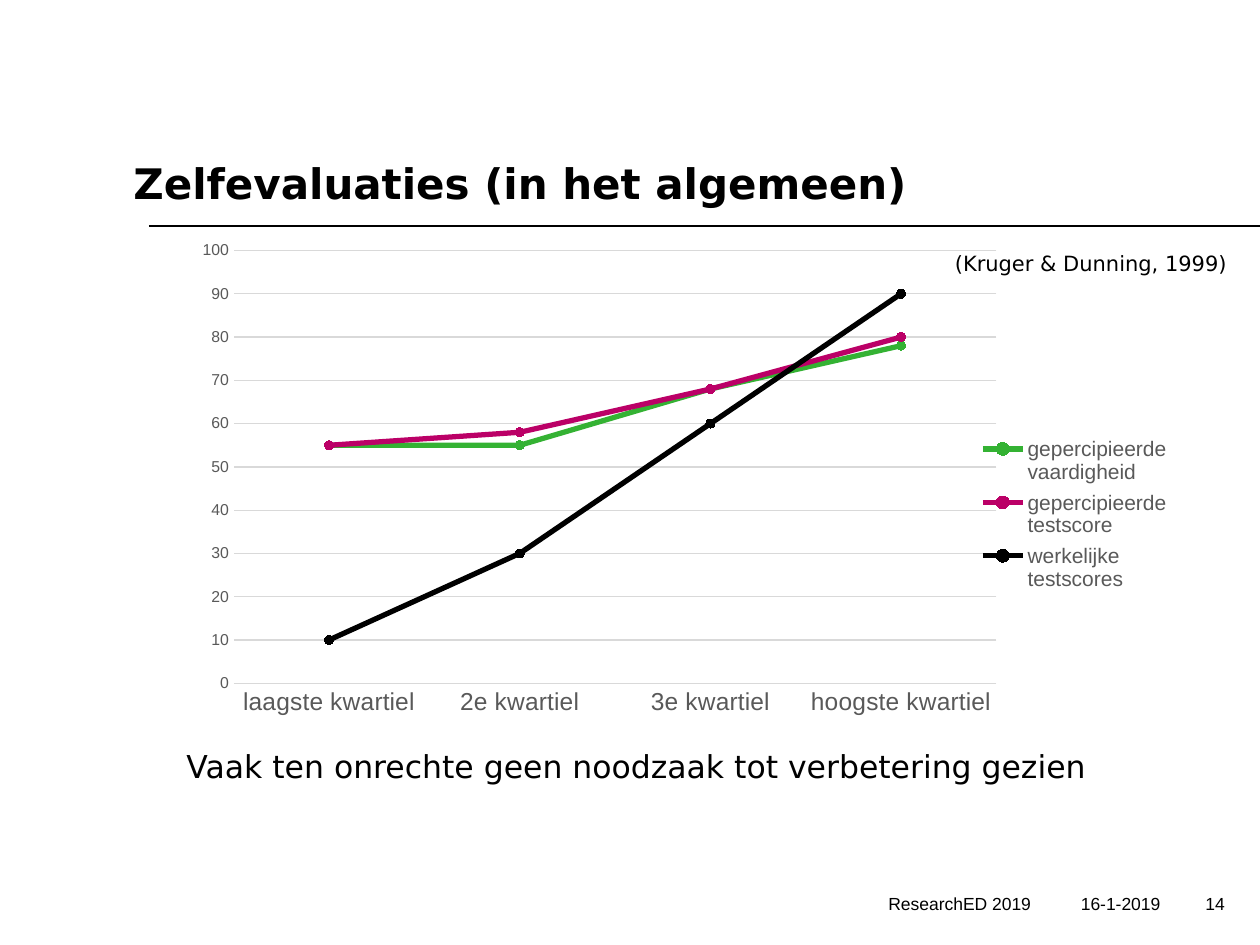
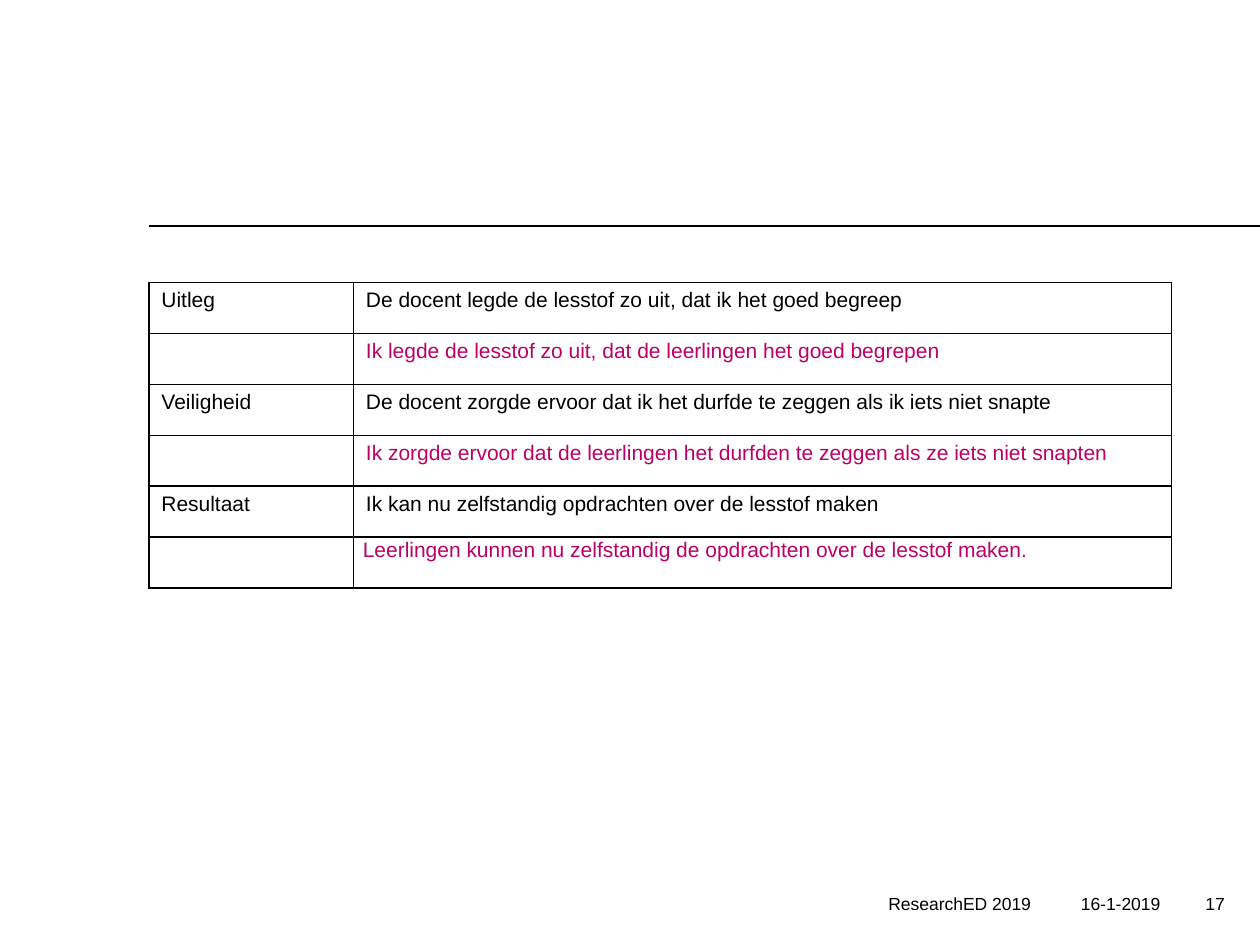
from lxml import etree
from pptx import Presentation
from pptx import oxml
from pptx.chart import data
from pptx.dml import color
from pptx.enum import chart as kinds, shapes, text
from pptx.oxml import ns
from pptx.util import Cm, Pt

BLACK, PINK, GREEN = "000000", "BB0067", "34B233"
GREY, PALE = "595959", "D9D9D9"
SANS, ARIAL = "DejaVu Sans", "Arial"
RIGHT = text.PP_ALIGN.RIGHT
FOOTER = (9.83, 17.78, 14.86, 1.32)
TITLE = (2.69, 1.73, 23.01, 2.46)
GRAPH = (3.66, 4.65, 21.06, 10.03)
SOURCE = (19, 4.93, 6.4, 0.76)
CLAIM = (3.51, 14.94, 21.21, 1.8)
GRID = (3, 5.69, 20.62, 6.17)

QUARTS = ["laagste kwartiel", "2e kwartiel", "3e kwartiel", "hoogste kwartiel"]
SCORES = [
    ("gepercipieerde vaardigheid", GREEN, (55, 55, 68, 78)),
    ("gepercipieerde testscore", PINK, (55, 58, 68, 80)),
    ("werkelijke testscores", BLACK, (10, 30, 60, 90)),
]
ITEMS = [
    ("Uitleg", "De docent legde de lesstof zo uit, dat ik het goed begreep",
     "Ik legde de lesstof zo uit, dat de leerlingen het goed begrepen"),
    ("Veiligheid", "De docent zorgde ervoor dat ik het durfde te zeggen als ik iets niet snapte",
     "Ik zorgde ervoor dat de leerlingen het durfden te zeggen als ze iets niet snapten"),
    ("Resultaat", "Ik kan nu zelfstandig opdrachten over de lesstof maken",
     "Leerlingen kunnen nu zelfstandig de opdrachten over de lesstof maken."),
]


def rgb(code):
    """Turn a hex string into a colour."""
    return color.RGBColor.from_string(code)


def apply(item, **values):
    """Set each named attribute on an item."""
    for name, value in values.items():
        setattr(item, name, value)


def style(font, size, face=ARIAL, code=BLACK, bold=False):
    """Give a font its size, face, colour and weight."""
    apply(font, size=Pt(size), name=face, bold=bold)
    font.color.rgb = rgb(code)


def stroke(line, code, width):
    """Give a line its colour and width."""
    line.color.rgb = rgb(code)
    line.width = Pt(width)


def write(slide, box, words, size, face=ARIAL, bold=False, frame=None, para=None):
    """Add a wrapped text box with one paragraph."""
    area = slide.shapes.add_textbox(*map(Cm, box)).text_frame
    apply(area, word_wrap=True, **(frame or {}))
    line = area.paragraphs[0]
    apply(line, **(para or {}))
    run = line.add_run()
    run.text = words
    style(run.font, size, face, bold=bold)


def base(deck, number):
    """Add a slide with the shared rule and footer."""
    slide = deck.slides.add_slide(deck.slide_layouts[6])
    rule = slide.shapes.add_connector(
        shapes.MSO_CONNECTOR.STRAIGHT, Cm(3), Cm(4.55), deck.slide_width, Cm(4.55))
    stroke(rule.line, BLACK, 1)
    etree.SubElement(rule._element.spPr, ns.qn("a:effectLst"))
    left, top, _, height = FOOTER
    parts = [("ResearchED 2019", 11.2, 0.25), ("16-1-2019", 2.61, 0.25), (number, 1.05, 0)]
    for words, width, inset in parts:
        write(slide, (left, top, width, height), words, 10,
              frame={"margin_right": Cm(inset)},
              para={"alignment": RIGHT, "line_spacing": Pt(15)})
        left += width
    return slide


def layout(parent, x, y, w, h, inner=False):
    """Build a manual layout as fractions of the chart."""
    target = '<c:layoutTarget val="inner"/>' if inner else ""
    node = oxml.parse_xml(
        f'<c:layout {ns.nsdecls("c")}><c:manualLayout>{target}'
        '<c:xMode val="edge"/><c:yMode val="edge"/>'
        f'<c:x val="{x}"/><c:y val="{y}"/><c:w val="{w}"/><c:h val="{h}"/>'
        '</c:manualLayout></c:layout>')
    for old in parent.findall(ns.qn("c:layout")):
        parent.remove(old)
    return node


def plot(slide, box):
    """Draw the line chart of perceived and real scores."""
    source = data.CategoryChartData(number_format="0")
    source.categories = QUARTS
    for name, _, values in SCORES:
        source.add_series(name, values)
    chart = slide.shapes.add_chart(
        kinds.XL_CHART_TYPE.LINE_MARKERS, *map(Cm, box), source).chart
    apply(chart, has_title=False, has_legend=True)
    style(chart.font, 10)
    chart.plots[0].vary_by_categories = False
    for series, (_, code, _) in zip(chart.plots[0].series, SCORES):
        series.smooth = False
        stroke(series.format.line, code, 3)
        mark = series.marker
        apply(mark, style=kinds.XL_MARKER_STYLE.CIRCLE, size=5)
        mark.format.fill.solid()
        mark.format.fill.fore_color.rgb = rgb(code)
        stroke(mark.format.line, code, 0.75)
    cats, vals = chart.category_axis, chart.value_axis
    for axis, size in ((cats, 14), (vals, 9)):
        apply(axis, major_tick_mark=kinds.XL_TICK_MARK.NONE,
              minor_tick_mark=kinds.XL_TICK_MARK.NONE)
        style(axis.tick_labels.font, size, code=GREY)
    stroke(cats.format.line, PALE, 0.75)
    vals.format.line.fill.background()
    apply(vals, minimum_scale=0, maximum_scale=100, major_unit=10)
    stroke(vals.major_gridlines.format.line, PALE, 0.75)
    legend = chart.legend
    apply(legend, position=kinds.XL_LEGEND_POSITION.RIGHT, include_in_layout=False)
    style(legend.font, 12, code=GREY)
    node = legend._element
    node.find(ns.qn("c:legendPos")).addnext(layout(node, 0.75, 0.4, 0.21, 0.34))
    root = chart._chartSpace.chart
    area = root.plotArea
    area.insert(0, layout(area, 0.05, 0.04, 0.73, 0.87, True))
    root.addnext(oxml.parse_xml(
        f'<c:spPr {ns.nsdecls("c", "a")}><a:noFill/><a:ln><a:noFill/></a:ln></c:spPr>'))


def border(cell):
    """Draw a thin black line on every side of a cell."""
    props = cell._tc.get_or_add_tcPr()
    for side in "LRTB":
        props.append(oxml.parse_xml(
            f'<a:ln{side} {ns.nsdecls("a")} w="12700"><a:solidFill>'
            f'<a:srgbClr val="{BLACK}"/></a:solidFill></a:ln{side}>'))
    cell.fill.background()


def table(slide, box):
    """List each theme with its pupil and teacher statement."""
    rows = [row for theme, pupil, tutor in ITEMS
            for row in ((theme, pupil, BLACK), ("", tutor, PINK))]
    grid = slide.shapes.add_table(len(rows), 2, *map(Cm, box)).table
    apply(grid, first_row=False, horz_banding=False)
    for column, share in zip(grid.columns, (0.2, 0.8)):
        column.width = Cm(box[2] * share)
    for line, (theme, words, code) in zip(grid.rows, rows):
        line.height = Cm(box[3] / len(rows))
        for cell, value in zip(line.cells, (theme, words)):
            border(cell)
            if value:
                run = cell.text_frame.paragraphs[0].add_run()
                run.text = value
                style(run.font, 12, code=code)
    last = grid.cell(len(rows) - 1, 1)
    apply(last, margin_left=Cm(0.19), margin_right=Cm(0.19), margin_top=0, margin_bottom=0)
    last.text_frame.paragraphs[0].line_spacing = 1.07


def main():
    """Build both slides and save the deck."""
    deck = Presentation()
    apply(deck, slide_width=Cm(25.4), slide_height=Cm(19.05))
    slide = base(deck, "14")
    write(slide, TITLE, "Zelfevaluaties (in het algemeen)", 24, SANS, True,
          {"margin_left": 0, "margin_bottom": 0, "vertical_anchor": text.MSO_ANCHOR.BOTTOM})
    write(slide, CLAIM, "Vaak ten onrechte geen noodzaak tot verbetering gezien", 18, SANS)
    write(slide, SOURCE, "(Kruger & Dunning, 1999)", 12, SANS)
    plot(slide, GRAPH)
    table(base(deck, "17"), GRID)
    deck.save("out.pptx")


if __name__ == "__main__":
    main()
